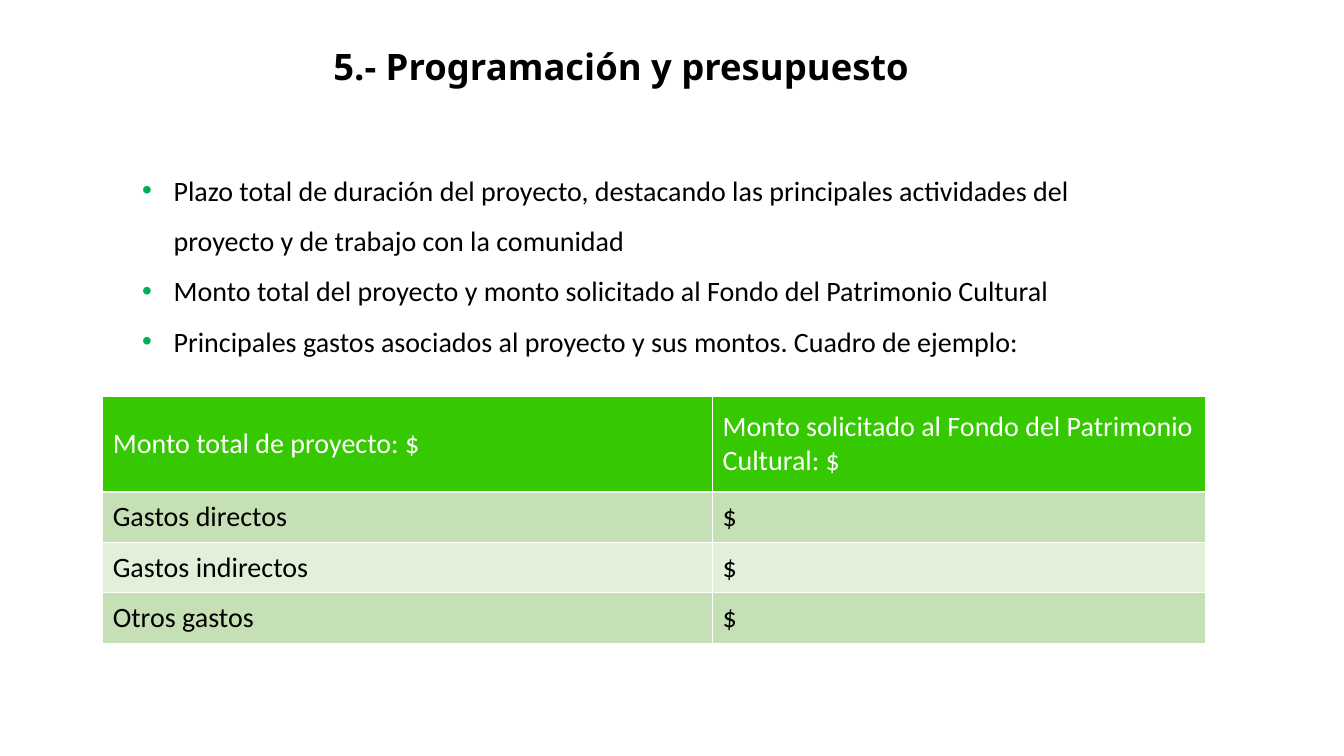
import pptx
import pptx.util
import pptx.dml.color
import pptx.enum.text
import pptx.oxml
import pptx.oxml.ns
from dataclasses import dataclass

Pt = pptx.util.Pt
RGB = pptx.dml.color.RGBColor.from_string
MIDDLE = pptx.enum.text.MSO_ANCHOR.MIDDLE
NO_FIT = pptx.enum.text.MSO_AUTO_SIZE.NONE


@dataclass(frozen=True)
class Theme:
    title_font: str = "Noto Sans"
    body_font: str = "Calibri"
    title_size: int = 26
    body_size: int = 20
    text: str = "000000"
    light: str = "FFFFFF"
    bullet: str = "00B050"
    header: str = "36C800"
    bands: tuple = ("C5E0B4", "E2F0D9")


THEME = Theme()
TITLE = "5.- Programación y presupuesto"
POINTS = [
    "Plazo total de duración del proyecto, destacando las principales actividades del "
    "proyecto y de trabajo con la comunidad",
    "Monto total del proyecto y monto solicitado al Fondo del Patrimonio Cultural",
    "Principales gastos asociados al proyecto y sus montos. Cuadro de ejemplo:",
]
BUDGET = [
    ("Monto total de proyecto: $", "Monto solicitado al Fondo del Patrimonio Cultural: $"),
    ("Gastos directos", "$"),
    ("Gastos indirectos", "$"),
    ("Otros gastos", "$"),
]


def place(sp, box):
    sp.left, sp.top, sp.width, sp.height = (Pt(v) for v in box)


def style(p, font, size, color, bold=False):
    for r in p.runs:
        r.font.name, r.font.size, r.font.bold = font, Pt(size), bold
        r.font.color.rgb = RGB(color)


def add_xml(parent, xml):
    ns = pptx.oxml.ns.nsdecls("a")
    parent.append(pptx.oxml.parse_xml(xml.replace(" ", f" {ns} ", 1)))


def add_title(s, box):
    sp = s.shapes.title
    place(sp, box)
    tf = sp.text_frame
    tf.text = TITLE
    tf.auto_size, tf.vertical_anchor = NO_FIT, MIDDLE
    p = tf.paragraphs[0]
    p.alignment = pptx.enum.text.PP_ALIGN.CENTER
    p.line_spacing = 0.9
    style(p, THEME.title_font, THEME.title_size, THEME.text, bold=True)


def add_points(s, box):
    sp = s.placeholders[1]
    place(sp, box)
    tf = sp.text_frame
    tf.text = "\n".join(POINTS)
    tf.auto_size, tf.vertical_anchor = NO_FIT, pptx.enum.text.MSO_ANCHOR.TOP
    for p in tf.paragraphs:
        p.line_spacing, p.space_before = 1.5, Pt(0)
        pPr = p._p.get_or_add_pPr()
        pPr.set("marL", str(Pt(22.5)))
        pPr.set("indent", str(-Pt(22.5)))
        add_xml(pPr, f'<a:buClr ><a:srgbClr val="{THEME.bullet}"/></a:buClr>')
        add_xml(pPr, '<a:buFont typeface="Arial"/>')
        add_xml(pPr, '<a:buChar char="•"/>')
        style(p, THEME.body_font, THEME.body_size, THEME.text)


def add_budget(s, box):
    left, top, width, height = box
    header_height = 68.4
    row_height = (height - header_height) / (len(BUDGET) - 1)
    first_width = 435.6
    table = s.shapes.add_table(len(BUDGET), 2, *(Pt(v) for v in box)).table
    for col, w in zip(table.columns, (first_width, width - first_width)):
        col.width = Pt(w)
    for i, texts in enumerate(BUDGET):
        table.rows[i].height = Pt(row_height if i else header_height)
        fill = THEME.bands[(i - 1) % 2] if i else THEME.header
        for j, text in enumerate(texts):
            cell = table.cell(i, j)
            cell.text = text
            cell.vertical_anchor = MIDDLE
            style(cell.text_frame.paragraphs[0], THEME.body_font, THEME.body_size,
                  THEME.text if i else THEME.light)
            # White grid lines come before the fill
            for side in "LRTB":
                add_xml(cell._tc.get_or_add_tcPr(),
                        f'<a:ln{side} w="{Pt(1)}"><a:solidFill><a:srgbClr val="{THEME.light}"/>'
                        f'</a:solidFill></a:ln{side}>')
            cell.fill.solid()
            cell.fill.fore_color.rgb = RGB(fill)


def budget_slide(prs):
    s = prs.slides.add_slide(prs.slide_layouts[1])
    add_title(s, (169.2, 11.5, 549.4, 74.9))
    add_budget(s, (73.4, 283, 787.7, 176.4))
    add_points(s, (94.3, 108, 726.5, 221.8))


def main():
    prs = pptx.Presentation()
    prs.slide_width, prs.slide_height = Pt(960), Pt(540)
    budget_slide(prs)
    prs.save("out.pptx")


if __name__ == "__main__":
    main()
